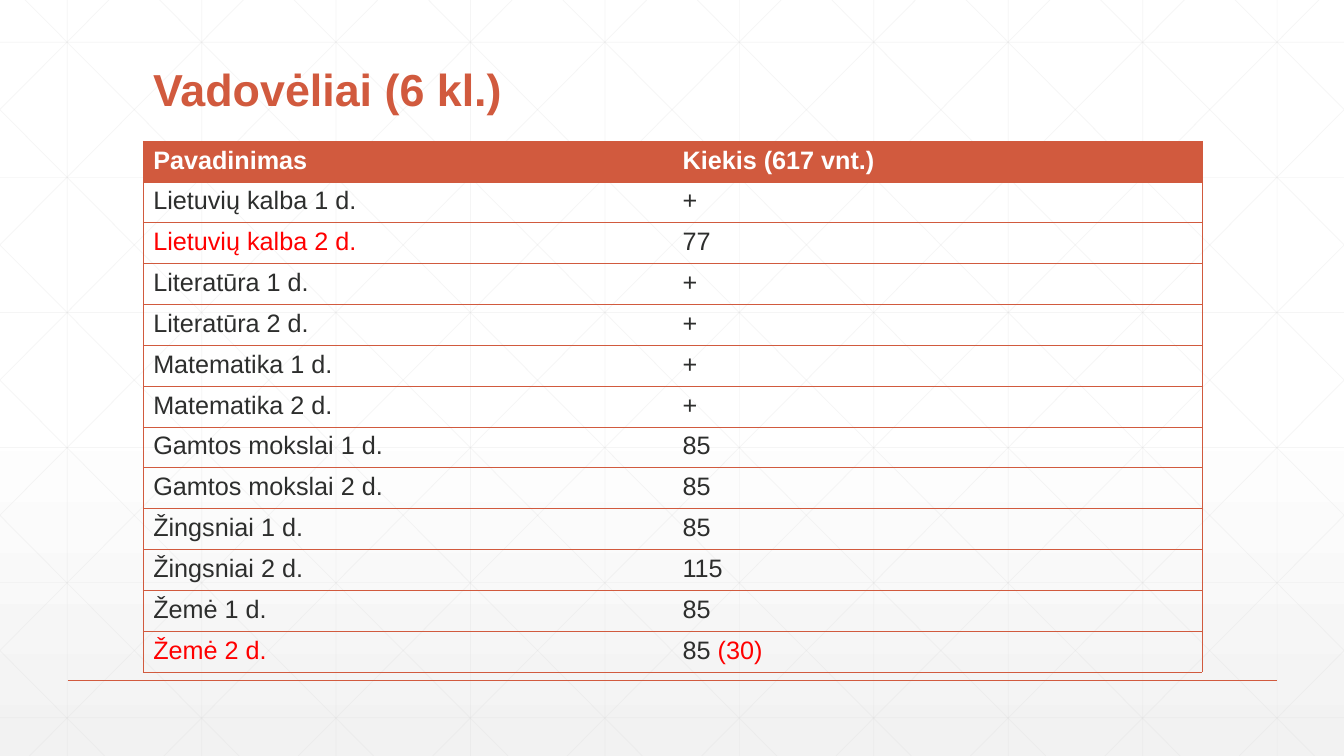
from lxml import etree
from pptx import Presentation
from pptx.dml.color import RGBColor
from pptx.enum.shapes import MSO_CONNECTOR as CONN
from pptx.enum.text import MSO_ANCHOR as ANCHOR
from pptx.oxml import parse_xml
from pptx.oxml.ns import nsdecls, qn
from pptx.util import Inches, Pt

ACCENT = RGBColor(0xD1, 0x5A, 0x3E)
GRID = RGBColor(0xD9, 0xD9, 0xD9)
DARK = RGBColor(0x2D, 0x2E, 0x2D)
RED = RGBColor(0xFF, 0x00, 0x00)
WHITE = RGBColor(0xFF, 0xFF, 0xFF)
PALE = RGBColor(0xF2, 0xF2, 0xF2)
W, H = 13.33, 7.5

prs = Presentation()
prs.slide_width, prs.slide_height = Inches(W), Inches(H)
s = prs.slides.add_slide(prs.slide_layouts[6])


def add_line(x1, y1, x2, y2, color, width, alpha=None):
    c = s.shapes.add_connector(CONN.STRAIGHT, Inches(x1), Inches(y1), Inches(x2), Inches(y2))
    c.line.color.rgb = color
    c.line.width = Pt(width)
    sp_pr = c._element.spPr
    if alpha:
        clr = sp_pr.find(".//" + qn("a:srgbClr"))
        etree.SubElement(clr, qn("a:alpha"), val=str(alpha * 1000))
    etree.SubElement(sp_pr, qn("a:effectLst"))


def add_run(p, text, size, color, bold=False):
    r = p.add_run()
    r.text = text
    fmt = {"name": "Arial", "size": Pt(size), "bold": bold}
    for key, value in fmt.items():
        setattr(r.font, key, value)
    r.font.color.rgb = color


# Background gradient, white down to pale grey
fill = s.background.fill
fill.gradient()
fill.gradient_angle = 270
for stop, (pos, color) in zip(fill.gradient_stops, [(0.53, WHITE), (1, PALE)]):
    stop.position = pos
    stop.color.rgb = color

# Background grid: verticals, horizontals, then both diagonals cut at the edges
STEP = 4 / 3
lines = [(STEP * (i + 0.5), 0, STEP * (i + 0.5), H) for i in range(10)]
lines += [(0, 0.42 + 1.34 * i, W, 0.42 + 1.34 * i) for i in range(6)]
RUN = 7.455
SLOPE = H / RUN
for i in range(-5, 10):
    x0 = 0.25 + STEP * i
    x1, x2 = max(0, x0), min(W, x0 + RUN)
    y1, y2 = (x1 - x0) * SLOPE, (x2 - x0) * SLOPE
    lines += [(x1, y1, x2, y2), (W - x1, y1, W - x2, y2)]
for line in lines:
    add_line(*line, GRID, 0.5, alpha=25)

# Footer rule
add_line(0.67, 6.75, 12.67, 6.75, ACCENT, 1)

# Title
tf = s.shapes.add_textbox(Inches(1.42), Inches(0.55), Inches(10.5), Inches(0.65)).text_frame
tf.word_wrap = True
tf.vertical_anchor = ANCHOR.BOTTOM
p = tf.paragraphs[0]
p.line_spacing = 0.9
add_run(p, "Vadovėliai (6 kl.)", 32, ACCENT, bold=True)

# Textbook table: name, count, name colour, count note in red
books = [
    ("Pavadinimas", "Kiekis (617 vnt.)", WHITE, ""),
    ("Lietuvių kalba 1 d.", "+", DARK, ""),
    ("Lietuvių kalba 2 d.", "77", RED, ""),
    ("Literatūra 1 d.", "+", DARK, ""),
    ("Literatūra 2 d.", "+", DARK, ""),
    ("Matematika 1 d.", "+", DARK, ""),
    ("Matematika 2 d.", "+", DARK, ""),
    ("Gamtos mokslai 1 d.", "85", DARK, ""),
    ("Gamtos mokslai 2 d.", "85", DARK, ""),
    ("Žingsniai 1 d.", "85", DARK, ""),
    ("Žingsniai 2 d.", "115", DARK, ""),
    ("Žemė 1 d.", "85", DARK, ""),
    ("Žemė 2 d.", "85 ", RED, "(30)"),
]
table = s.shapes.add_table(len(books), 2, Inches(1.42), Inches(1.4),
                           Inches(10.5), Inches(5.27)).table
table.horz_banding = False
for i, (name, count, color, note) in enumerate(books):
    header = i == 0
    for j, text in enumerate((name, count)):
        cell = table.cell(i, j)
        p = cell.text_frame.paragraphs[0]
        text_color = color if header or j == 0 else DARK
        add_run(p, text, 18, text_color, bold=header)
        if j == 1 and note:
            add_run(p, note, 18, RED)

        # Borders on all sides except between the columns
        tc_pr = cell._tc.get_or_add_tcPr()
        inner = "lnR" if j == 0 else "lnL"
        for side in ("lnL", "lnR", "lnT", "lnB"):
            paint = "<a:noFill/>" if side == inner else (
                f'<a:solidFill><a:srgbClr val="{ACCENT}"/></a:solidFill>')
            tc_pr.append(parse_xml(
                f'<a:{side} {nsdecls("a")} w="{Pt(0.5)}">{paint}</a:{side}>'))
        if header:
            cell.fill.solid()
            cell.fill.fore_color.rgb = ACCENT
        else:
            cell.fill.background()

prs.save("out.pptx")
